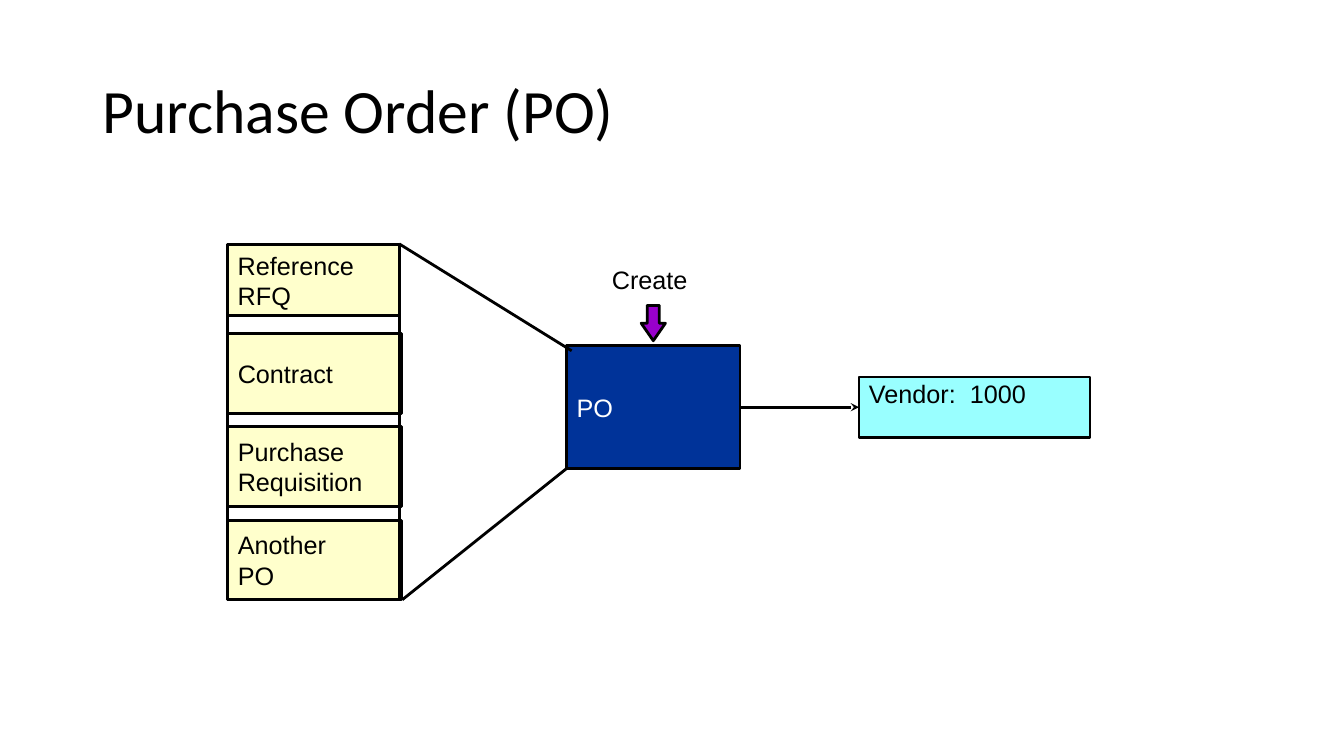
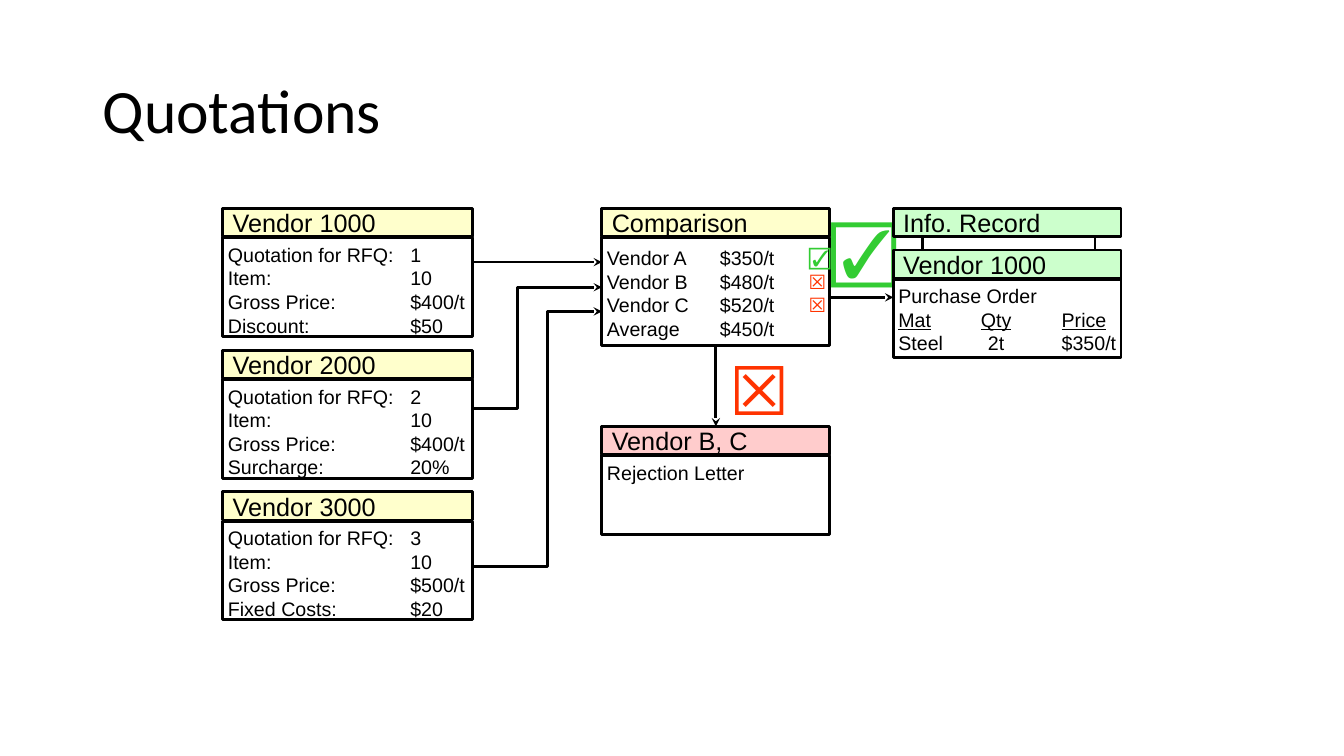
from dataclasses import dataclass

from lxml.etree import SubElement
from pptx import Presentation
from pptx.dml.color import RGBColor
from pptx.enum.shapes import MSO_CONNECTOR, MSO_SHAPE
from pptx.enum.text import MSO_ANCHOR, MSO_AUTO_SIZE
from pptx.oxml.ns import qn
from pptx.util import Inches, Pt


@dataclass(frozen=True)
class Theme:
    ink: str = "000000"
    white: str = "FFFFFF"
    cream: str = "FFFFCC"
    aqua: str = "99FFFF"
    navy: str = "003399"
    plum: str = "9900CC"
    pink: str = "FFCCCC"
    mint: str = "CCFFCC"
    green: str = "33CC33"
    red: str = "FF3300"
    face: str = "Arial"
    head: str = "Calibri"
    title: int = 44
    label: int = 18
    body: int = 14
    tick: int = 16
    sign: int = 48
    line: int = 2


T = Theme()
WIDE, HIGH = 13.33, 7.5
LEFT, MID, TOP = 1, 3, 0  # connection sites and anchors
BOTTOM, RIGHT = 2, 3

# Purchase order: content, then its stack of boxes
SOURCES = [["Contract"], ["Purchase", "Requisition"], ["Another", "PO"]]
STACK = dict(x=2.26, y=3.31, w=1.72, h=0.79, step=0.925)

# Quotations: content
QUOTES = [
    ("Vendor 1000", "1", "$400/t", "Discount:\t$50"),
    ("Vendor 2000", "2", "$400/t", "Surcharge:\t20%"),
    ("Vendor 3000", "3", "$500/t", "Fixed Costs:\t$20"),
]
YES, NO = "☑", "☒"
RATES = [
    [("Vendor A\t$350/t\t", {}), (YES, dict(size=T.tick, color=T.green))],
    [("Vendor B\t$480/t\t", {}), (NO, dict(color=T.red))],
    [("Vendor C\t$520/t\t", {}), (NO, dict(color=T.red))],
    "Average\t$450/t",
]
ORDER = ["Purchase Order", [("Mat\tQty\tPrice", dict(under=True))], "Steel\t2t\t$350/t"]

# Quotations: card grid
COLS = dict(quote=2.21, rate=5.97, order=8.86)
WIDTH = dict(quote=2.48, rate=2.26, order=2.26)
ROW, STEP, BAR, DROP = 2.07, 1.405, 0.28, 0.29


def write(shape, paras, size=T.label, color=T.ink, font=T.face, anchor=MSO_ANCHOR.MIDDLE,
          pad=0.1, wrap=False, space=None, tabs=()):
    """Fill a shape with paragraphs; each is a string or a list of (text, format) runs."""
    frame = shape.text_frame
    frame.word_wrap = wrap
    frame.vertical_anchor = anchor
    frame.margin_left = frame.margin_right = Inches(pad)
    frame.margin_top = frame.margin_bottom = Inches(0.05)
    for i, runs in enumerate(paras):
        para = frame.paragraphs[0] if i == 0 else frame.add_paragraph()
        props = para._p.get_or_add_pPr()
        props.set("algn", "l")
        if space:
            para.line_spacing = space
        if tabs:
            stops = SubElement(props, qn("a:tabLst"))
            for at, kind in tabs:
                SubElement(stops, qn("a:tab"), pos=str(Inches(at)), algn=kind)
        for text, style in [(runs, {})] if isinstance(runs, str) else runs:
            run = para.add_run()
            run.text = text
            run.font.name = font
            run.font.size = Pt(style.get("size", size))
            run.font.color.rgb = RGBColor.from_string(style.get("color", color))
            if style.get("under"):
                run.font.underline = True


def stroke(shape, arrow=False):
    shape.line.color.rgb = RGBColor.from_string(T.ink)
    shape.line.width = Pt(T.line)
    if arrow:
        SubElement(shape.line._get_or_add_ln(), qn("a:tailEnd"), type="stealth")


def box(slide, x, y, w, h, fill=None, paras=(), kind=MSO_SHAPE.RECTANGLE, **form):
    shape = slide.shapes.add_shape(kind, *map(Inches, (x, y, w, h)))
    shape.shadow.inherit = False
    if fill:
        shape.fill.solid()
        shape.fill.fore_color.rgb = RGBColor.from_string(fill)
    else:
        shape.fill.background()
    stroke(shape)
    if paras:
        write(shape, paras, **form)
    return shape


def note(slide, x, y, w, h, text, grow=False, **form):
    shape = slide.shapes.add_textbox(*map(Inches, (x, y, w, h)))
    write(shape, [text], **form)
    if grow:
        shape.text_frame.auto_size = MSO_AUTO_SIZE.SHAPE_TO_FIT_TEXT


def link(slide, start=(0, 0), end=(0, 0), join=None, arrow=False):
    """Draw a line between points, or between two (shape, site) pairs given as join."""
    line = slide.shapes.add_connector(MSO_CONNECTOR.STRAIGHT, *map(Inches, (*start, *end)))
    if join:
        line.begin_connect(*join[0])
        line.end_connect(*join[1])
    stroke(line, arrow)
    SubElement(line._element.spPr, qn("a:effectLst"))


def bend(slide, points):
    """Draw an open path of right angles that ends in an arrow."""
    dots = [(Inches(x), Inches(y)) for x, y in points]
    path = slide.shapes.build_freeform(*dots[0])
    path.add_line_segments(dots[1:], close=False)
    shape = path.convert_to_shape()
    shape.shadow.inherit = False
    shape.fill.background()
    stroke(shape, arrow=True)


def bar(slide, col, y, fill, text):
    return box(slide, COLS[col], y, WIDTH[col], BAR, fill, [text])


def card(slide, col, y, h, fill, head, paras, tabs=()):
    """Stack a coloured heading on a white body and return both."""
    body = box(slide, COLS[col], y + DROP, WIDTH[col], h, T.white, paras, size=T.body,
               anchor=MSO_ANCHOR.TOP, pad=0.05, tabs=tabs)
    return bar(slide, col, y, fill, head), body


def start(deck, title):
    slide = deck.slides.add_slide(deck.slide_layouts[6])
    note(slide, 0.92, 0.4, 11.5, 1.45, title, size=T.title, font=T.head, wrap=True, space=0.9)
    return slide


def purchase(deck):
    slide = start(deck, "Purchase Order (PO)")
    x, y, w, h, step = STACK.values()
    for i, name in enumerate(SOURCES):
        box(slide, x, y + i * step, w, h, T.cream, name)
    vendor = box(slide, 8.52, 3.74, 2.29, 0.6, T.aqua, ["Vendor:\t1000"],
                 anchor=MSO_ANCHOR.TOP, space=0.9, tabs=[(1, "l")])
    order = box(slide, 5.62, 3.43, 1.72, 1.22, T.navy, ["PO"], color=T.white)
    box(slide, x, 2.45, 1.7, 3.5)
    box(slide, x, 2.43, 1.7, 0.7, T.cream, ["Reference", "RFQ"])
    link(slide, (3.96, 2.42), (5.67, 3.48))
    link(slide, (3.99, 5.95), (5.63, 4.64))
    link(slide, join=[(order, RIGHT), (vendor, LEFT)], arrow=True)
    note(slide, 5.97, 2.57, 0.98, 0.4, "Create")
    arrow = box(slide, 6.36, 3.03, 0.24, 0.35, T.plum, kind=MSO_SHAPE.DOWN_ARROW)
    arrow.adjustments[1] = 0.72


def quotes(deck):
    slide = start(deck, "Quotations")
    for i, (name, number, price, extra) in enumerate(QUOTES):
        lines = [f"Quotation for RFQ:\t{number}", "Item:\t10", f"Gross Price:\t{price}", extra]
        card(slide, "quote", ROW + i * STEP, 0.98, T.cream, name, lines, tabs=[(1.81, "l")])
    rates = card(slide, "rate", ROW, 1.07, T.cream, "Comparison", RATES,
                 tabs=[(1.12, "l"), (2, "l")])[1]
    reject = card(slide, "rate", 4.23, 0.78, T.pink, "Vendor B, C", ["Rejection Letter"])[0]

    edge, goal = COLS["quote"] + WIDTH["quote"], COLS["rate"]
    link(slide, (edge, 2.6), (goal, 2.6), arrow=True)
    for turn, low, high in [(5.13, 4.05, 2.85), (5.43, 5.62, 3.09)]:
        bend(slide, [(edge, low), (turn, low), (turn, high), (goal, high)])
    link(slide, join=[(rates, BOTTOM), (reject, TOP)], arrow=True)
    link(slide, (goal + WIDTH["rate"], 2.95), (COLS["order"], 2.95), arrow=True)

    note(slide, 7.14, 3.41, 0.8, 0.9, NO, size=T.sign, color=T.red, grow=True,
         anchor=MSO_ANCHOR.TOP)
    note(slide, 8.14, 2.01, 0.8, 0.9, YES, size=T.sign, color=T.green, grow=True,
         anchor=MSO_ANCHOR.TOP)
    for x in (9.15, 10.86):
        link(slide, (x, ROW + BAR), (x, 2.48))
    card(slide, "order", 2.48, 0.78, T.mint, "Vendor 1000", ORDER,
         tabs=[(0.97, "ctr"), (1.62, "l")])
    bar(slide, "order", ROW, T.mint, "Info. Record")


def main():
    deck = Presentation()
    deck.slide_width, deck.slide_height = Inches(WIDE), Inches(HIGH)
    purchase(deck)
    quotes(deck)
    deck.save("out.pptx")


if __name__ == "__main__":
    main()
